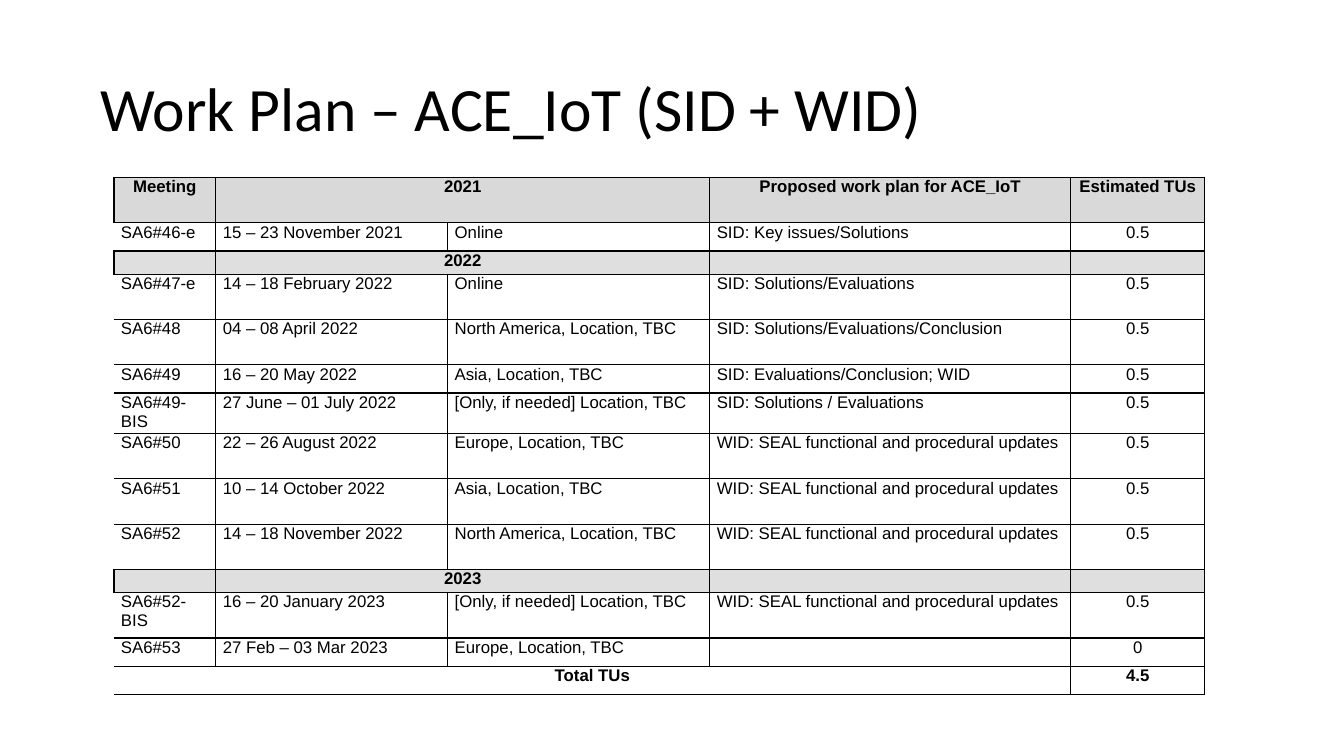
import pptx
import pptx.dml.color
import pptx.enum.text
import pptx.oxml.ns
import pptx.util
from lxml import etree

Inches = pptx.util.Inches
Pt = pptx.util.Pt
qn = pptx.oxml.ns.qn
ALIGN = pptx.enum.text.PP_ALIGN

BLACK, WHITE, HEAD, YEAR = "000000", "FFFFFF", "D9D9D9", "DFDFDF"
SEAL = "WID: SEAL functional and procedural updates"
ONLY = "[Only, if needed] Location, TBC"

COLS = [1.01, 2.3, 2.6, 3.58, 1.33]
# Each row: kind, height, texts of the five columns
ROWS = [
    ("head", 0.45, ["Meeting", "2021", "", "Proposed work plan for ACE_IoT", "Estimated TUs"]),
    ("meet", 0.28, ["SA6#46-e", "15 – 23 November 2021", "Online", "SID: Key issues/Solutions", "0.5"]),
    ("year", 0.23, ["", "2022", "", "", ""]),
    ("meet", 0.45, ["SA6#47-e", "14 – 18 February 2022", "Online", "SID: Solutions/Evaluations", "0.5"]),
    ("meet", 0.45, ["SA6#48", "04 – 08 April 2022", "North America, Location, TBC",
                    "SID: Solutions/Evaluations/Conclusion", "0.5"]),
    ("meet", 0.28, ["SA6#49", "16 – 20 May 2022", "Asia, Location, TBC",
                    "SID: Evaluations/Conclusion; WID", "0.5"]),
    ("meet", 0.28, ["SA6#49-BIS", "27 June – 01 July 2022", ONLY, "SID: Solutions / Evaluations", "0.5"]),
    ("meet", 0.45, ["SA6#50", "22 – 26 August 2022", "Europe, Location, TBC", SEAL, "0.5"]),
    ("meet", 0.45, ["SA6#51", "10 – 14 October 2022", "Asia, Location, TBC", SEAL, "0.5"]),
    ("meet", 0.45, ["SA6#52", "14 – 18 November 2022", "North America, Location, TBC", SEAL, "0.5"]),
    ("year", 0.23, ["", "2023", "", "", ""]),
    ("meet", 0.45, ["SA6#52-BIS", "16 – 20 January 2023", ONLY, SEAL, "0.5"]),
    ("meet", 0.28, ["SA6#53", "27 Feb – 03 Mar 2023", "Europe, Location, TBC", "", "0"]),
    ("total", 0.28, ["Total TUs", "", "", "", "4.5"]),
]
FILLS = {"head": HEAD, "year": YEAR, "meet": WHITE, "total": WHITE}
SPANS = {"head": (1, 2), "year": (1, 2), "total": (0, 3)}


def color(text):
    return pptx.dml.color.RGBColor.from_string(text)


class Deck:
    def __init__(self):
        self.prs = pptx.Presentation()
        self.prs.slide_width = Inches(13.33)
        self.prs.slide_height = Inches(7.5)
        self.slide = self.prs.slides.add_slide(self.prs.slide_layouts[6])

    def style(self, para, font, size, bold=False):
        for run in para.runs:
            run.font.name = font
            run.font.size = Pt(size)
            run.font.bold = bold
            run.font.color.rgb = color(BLACK)

    def title(self, text, left, top, width, height):
        box = self.slide.shapes.add_textbox(Inches(left), Inches(top), Inches(width), Inches(height))
        frame = box.text_frame
        frame.word_wrap = True
        frame.vertical_anchor = pptx.enum.text.MSO_ANCHOR.MIDDLE
        frame.text = text
        frame.paragraphs[0].line_spacing = 0.9
        self.style(frame.paragraphs[0], "Calibri", 44)

    def border(self, cell, open_left):
        """Rule all four sides in black, leaving the left one out if open."""
        props = cell._tc.get_or_add_tcPr()
        for side in "LRTB":
            line = etree.SubElement(props, qn("a:ln" + side), w=str(Pt(1)))
            if side == "L" and open_left:
                etree.SubElement(line, qn("a:noFill"))
            else:
                fill = etree.SubElement(line, qn("a:solidFill"))
                etree.SubElement(fill, qn("a:srgbClr"), val=BLACK)

    def cell(self, cell, text, fill, bold, center, open_left):
        self.border(cell, open_left)
        cell.fill.solid()
        cell.fill.fore_color.rgb = color(fill)
        cell.margin_left = cell.margin_right = Inches(0.07)
        cell.margin_top = cell.margin_bottom = 0
        cell.text_frame.text = text
        para = cell.text_frame.paragraphs[0]
        para.alignment = ALIGN.CENTER if center else ALIGN.LEFT
        para.space_before = para.space_after = Pt(1)
        self.style(para, "Arial", 12, bold)
        if not text:
            etree.SubElement(para._p, qn("a:endParaRPr"), sz="1200")

    def table(self, left, top):
        frame = self.slide.shapes.add_table(
            len(ROWS), len(COLS), Inches(left), Inches(top),
            Inches(sum(COLS)), Inches(sum(row[1] for row in ROWS)))
        grid = frame.table
        grid.first_row = grid.horz_banding = False
        for col, width in zip(grid.columns, COLS):
            col.width = Inches(width)
        for r, (kind, height, texts) in enumerate(ROWS):
            grid.rows[r].height = Inches(height)
            bold = kind != "meet"
            for c, text in enumerate(texts):
                open_left = c == 0 and kind in ("meet", "total")
                self.cell(grid.cell(r, c), text, FILLS[kind], bold, bold or c == 4, open_left)
            if kind in SPANS:
                first, last = SPANS[kind]
                grid.cell(r, first).merge(grid.cell(r, last))


def main():
    deck = Deck()
    deck.title("Work Plan – ACE_IoT (SID + WID)", 0.9, 0.38, 11.5, 1.45)
    deck.table(1.13, 1.76)
    deck.prs.save("out.pptx")


if __name__ == "__main__":
    main()
